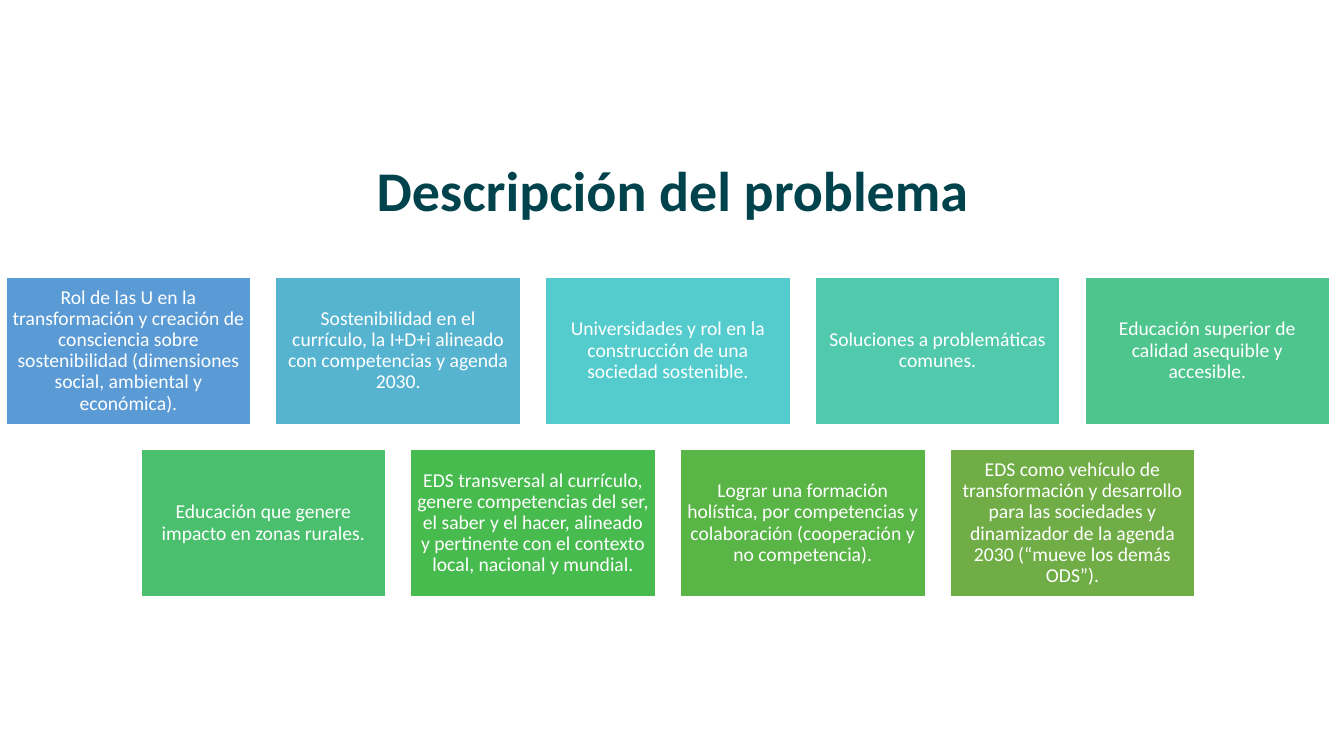
from pptx import Presentation
from pptx.dml.color import RGBColor
from pptx.enum.shapes import MSO_SHAPE
from pptx.enum.text import MSO_ANCHOR, PP_ALIGN
from pptx.util import Inches, Pt

WHITE = RGBColor(0xFF, 0xFF, 0xFF)
TEAL = RGBColor(0x00, 0x43, 0x4C)
BLUE = RGBColor(0x5B, 0x9B, 0xD5)
SKY = RGBColor(0x57, 0xB4, 0xD1)
AQUA = RGBColor(0x54, 0xCC, 0xCD)
MINT = RGBColor(0x51, 0xC9, 0xAD)
JADE = RGBColor(0x4D, 0xC5, 0x8D)
FERN = RGBColor(0x4A, 0xC0, 0x6E)
GREEN = RGBColor(0x48, 0xBB, 0x4F)
LEAF = RGBColor(0x59, 0xB5, 0x46)
OLIVE = RGBColor(0x70, 0xAD, 0x47)

LEFT, LAST, TOP = 0.06, 10.76, 2.75
WIDTH, HEIGHT = 2.43, 1.46
STEP = (LAST - LEFT) / 4
DROP = 1.71

ROWS = [
    [
        (BLUE, "Rol de las U en la transformación y creación de consciencia "
               "sobre sostenibilidad (dimensiones social, ambiental y económica)."),
        (SKY, "Sostenibilidad en el currículo, la I+D+i alineado con "
              "competencias y agenda 2030."),
        (AQUA, "Universidades y rol en la construcción de una sociedad sostenible."),
        (MINT, "Soluciones a problemáticas comunes."),
        (JADE, "Educación superior de calidad asequible y accesible."),
    ],
    [
        (FERN, "Educación que genere impacto en zonas rurales."),
        (GREEN, "EDS transversal al currículo, genere competencias del ser, "
                "el saber y el hacer, alineado y pertinente con el contexto "
                "local, nacional y mundial."),
        (LEAF, "Lograr una formación holística, por competencias y "
               "colaboración (cooperación y no competencia)."),
        (OLIVE, "EDS como vehículo de transformación y desarrollo para las "
                "sociedades y dinamizador de la agenda 2030 (“mueve los demás ODS”)."),
    ],
]


class Deck:
    """Holds the text style and the current slide."""

    title_font = {"name": "Calibri", "size": Pt(40), "bold": True}
    card_font = {"name": "Calibri", "size": Pt(14), "bold": False}
    margins = ("margin_left", "margin_top", "margin_right", "margin_bottom")

    def __init__(self):
        self.prs = Presentation()
        self.prs.slide_width = Inches(13.33)
        self.prs.slide_height = Inches(7.5)
        self.slide = self.prs.slides.add_slide(self.prs.slide_layouts[6])

    def label(self, frame, text, font, color):
        """Fill a frame with one centred paragraph."""
        frame.word_wrap = True
        frame.vertical_anchor = MSO_ANCHOR.MIDDLE
        para = frame.paragraphs[0]
        para.alignment = PP_ALIGN.CENTER
        para.line_spacing = 0.9
        run = para.add_run()
        run.text = text
        for key, value in font.items():
            setattr(run.font, key, value)
        run.font.color.rgb = color

    def title(self, text, *place):
        box = self.slide.shapes.add_textbox(*map(Inches, place))
        self.label(box.text_frame, text, self.title_font, TEAL)

    def card(self, text, color, *place):
        box = self.slide.shapes.add_shape(MSO_SHAPE.RECTANGLE, *map(Inches, place))
        box.shadow.inherit = False
        box.fill.solid()
        box.fill.fore_color.rgb = color
        box.line.color.rgb = WHITE
        box.line.width = Pt(1)
        for side in self.margins:
            setattr(box.text_frame, side, Inches(0.06))
        self.label(box.text_frame, text, self.card_font, WHITE)


def main():
    deck = Deck()
    deck.title("Descripción del problema", 0.92, 1.19, 11.5, 1.45)
    for i, row in enumerate(ROWS):
        start = LEFT + (len(ROWS[0]) - len(row)) * STEP / 2
        for j, (color, text) in enumerate(row):
            deck.card(text, color, start + j * STEP, TOP + i * DROP, WIDTH, HEIGHT)
    deck.prs.save("out.pptx")


if __name__ == "__main__":
    main()
